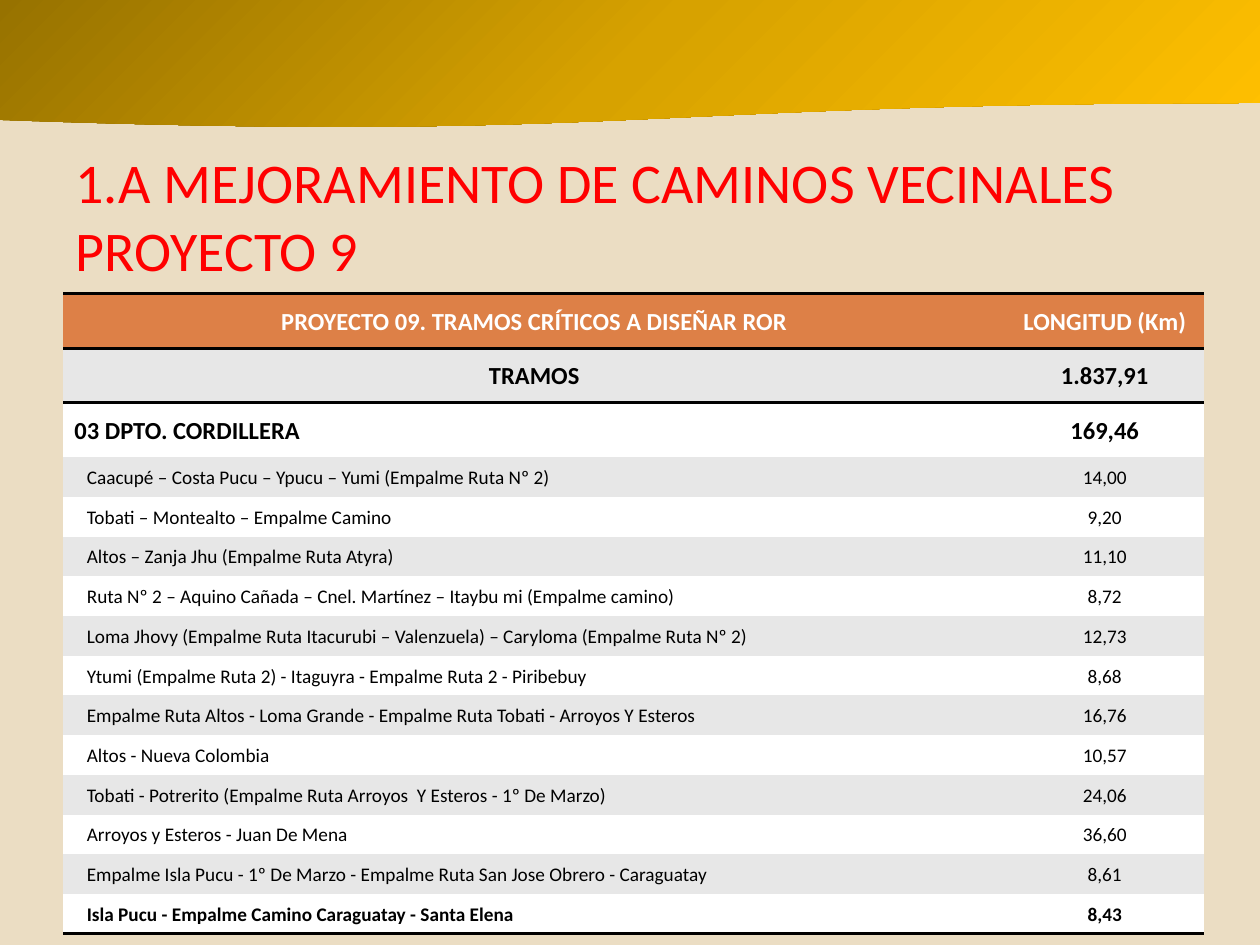
from copy import deepcopy

from lxml import etree
from pptx import Presentation
from pptx import util as u
from pptx.dml.color import RGBColor
from pptx.enum import shapes, text
from pptx.oxml import ns

SAND = RGBColor(0xEB, 0xDD, 0xC3)
BRONZE = RGBColor(0x97, 0x72, 0x00)
OCHRE = RGBColor(0xD7, 0xA2, 0x00)
GOLD = RGBColor(0xFF, 0xC0, 0x00)
RED = RGBColor(0xFF, 0x00, 0x00)
ORANGE = RGBColor(0xDD, 0x80, 0x47)
GREY = RGBColor(0xE7, 0xE7, 0xE7)
WHITE = RGBColor(0xFF, 0xFF, 0xFF)
BLACK = RGBColor(0x00, 0x00, 0x00)

NO_STYLE = "{2D5ABB26-0587-4C30-8999-92F81FD0307C}"

HEADINGS = [
    ("PROYECTO 09. TRAMOS CRÍTICOS A DISEÑAR ROR", "LONGITUD (Km)"),
    ("TRAMOS", "1.837,91"),
    ("03 DPTO. CORDILLERA", "169,46"),
]
SECTIONS = [
    ("Caacupé – Costa Pucu – Ypucu – Yumi (Empalme Ruta Nº 2)", "14,00"),
    ("Tobati – Montealto – Empalme Camino", "9,20"),
    ("Altos – Zanja Jhu (Empalme Ruta Atyra)", "11,10"),
    ("Ruta Nº 2 – Aquino Cañada – Cnel. Martínez – Itaybu mi (Empalme camino)", "8,72"),
    ("Loma Jhovy (Empalme Ruta Itacurubi – Valenzuela) – Caryloma (Empalme Ruta Nº 2)", "12,73"),
    ("Ytumi (Empalme Ruta 2) - Itaguyra - Empalme Ruta 2 - Piribebuy", "8,68"),
    ("Empalme Ruta Altos - Loma Grande - Empalme Ruta Tobati - Arroyos Y Esteros", "16,76"),
    ("Altos - Nueva Colombia", "10,57"),
    ("Tobati - Potrerito (Empalme Ruta Arroyos  Y Esteros - 1º De Marzo)", "24,06"),
    ("Arroyos y Esteros - Juan De Mena", "36,60"),
    ("Empalme Isla Pucu - 1º De Marzo - Empalme Ruta San Jose Obrero - Caraguatay", "8,61"),
    ("Isla Pucu - Empalme Camino Caraguatay - Santa Elena", "8,43"),
]


class RoadSlide:
    """Hold the style and the current slide, and add its elements."""

    font = "Calibri"

    def __init__(self, deck):
        self.slide = deck.slides.add_slide(deck.slide_layouts[5])
        background = self.slide.background.fill
        background.solid()
        background.fore_color.rgb = SAND

    def add_text(self, paragraph, words, size, color, bold=False):
        run = paragraph.add_run()
        run.text = words
        run.font.name = self.font
        run.font.size = u.Pt(size)
        run.font.bold = bold
        run.font.color.rgb = color

    def banner(self, width, height):
        wave = self.slide.shapes.add_shape(
            shapes.MSO_SHAPE.FLOWCHART_DOCUMENT, 0, 0, width, height)
        wave.shadow.inherit = False
        wave.line.fill.background()
        wave.fill.gradient()
        wave.fill.gradient_angle = 315
        first_stop = wave.element.spPr.find(".//" + ns.qn("a:gs"))
        first_stop.addnext(deepcopy(first_stop))
        colors = [(0, BRONZE), (0.5, OCHRE), (1, GOLD)]
        for stop, (position, color) in zip(wave.fill.gradient_stops, colors):
            stop.position = position
            stop.color.rgb = color

    def title(self, lines, left, top, width, height):
        heading = self.slide.shapes.title
        heading.left, heading.top = left, top
        heading.width, heading.height = width, height
        frame = heading.text_frame
        frame.auto_size = text.MSO_AUTO_SIZE.NONE
        frame.vertical_anchor = text.MSO_ANCHOR.MIDDLE
        paragraph = frame.paragraphs[0]
        paragraph.alignment = text.PP_ALIGN.LEFT
        for index, line in enumerate(lines):
            if index:
                paragraph.add_line_break()
            self.add_text(paragraph, line, 32, RED)

    def rule(self, cell, side):
        properties = cell._tc.get_or_add_tcPr()
        line = etree.SubElement(properties, ns.qn("a:" + side), w=str(u.Pt(2)))
        fill = etree.SubElement(line, ns.qn("a:solidFill"))
        etree.SubElement(fill, ns.qn("a:srgbClr"), val=str(BLACK))

    def cell(self, cell, words, size, color, bold, indent, fill, sides):
        for side in sides:
            self.rule(cell, side)
        cell.fill.solid()
        cell.fill.fore_color.rgb = fill
        cell.vertical_anchor = text.MSO_ANCHOR.MIDDLE
        cell.margin_left = u.Cm(indent or 0.03)
        cell.margin_right = cell.margin_top = u.Cm(0.03)
        cell.margin_bottom = 0
        paragraph = cell.text_frame.paragraphs[0]
        paragraph.alignment = text.PP_ALIGN.LEFT if indent else text.PP_ALIGN.CENTER
        self.add_text(paragraph, words, size, color, bold)

    def table(self, headings, sections, left, top, widths):
        rows = headings + sections
        heights = [u.Cm(1.1)] * len(headings) + [u.Cm(0.8)] * len(sections)
        table = self.slide.shapes.add_table(
            len(rows), len(widths), left, top, sum(widths), sum(heights)).table
        table.first_row = table.horz_banding = False
        table._tbl.tblPr.find(ns.qn("a:tableStyleId")).text = NO_STYLE
        for column, width in zip(table.columns, widths):
            column.width = width
        last = len(rows) - 1
        for r, (row, height) in enumerate(zip(rows, heights)):
            table.rows[r].height = height
            is_heading = r < len(headings)
            fill = ORANGE if r == 0 else GREY if r % 2 else WHITE
            sides = {0: ("lnT", "lnB"), 1: ("lnT",), last: ("lnB",)}.get(r, ())
            name_indent = {0: 0, 1: 0, 2: 0.23}.get(r, 0.48)
            for c, words in enumerate(row):
                self.cell(table.cell(r, c), words, 14 if is_heading else 11,
                          WHITE if r == 0 else BLACK, is_heading or r == last,
                          0 if c else name_indent, fill, sides)


def main():
    deck = Presentation()
    deck.slide_width, deck.slide_height = u.Cm(25.4), u.Cm(19.05)
    roads = RoadSlide(deck)
    roads.banner(deck.slide_width, u.Cm(2.59))
    roads.title(["1.A MEJORAMIENTO DE CAMINOS VECINALES ", "PROYECTO 9"],
                u.Cm(1.27), u.Cm(2.75), u.Cm(22.86), u.Cm(3.17))
    roads.table(HEADINGS, SECTIONS, u.Cm(1.27), u.Cm(5.92), [u.Cm(19), u.Cm(4)])
    deck.save("out.pptx")


if __name__ == "__main__":
    main()
